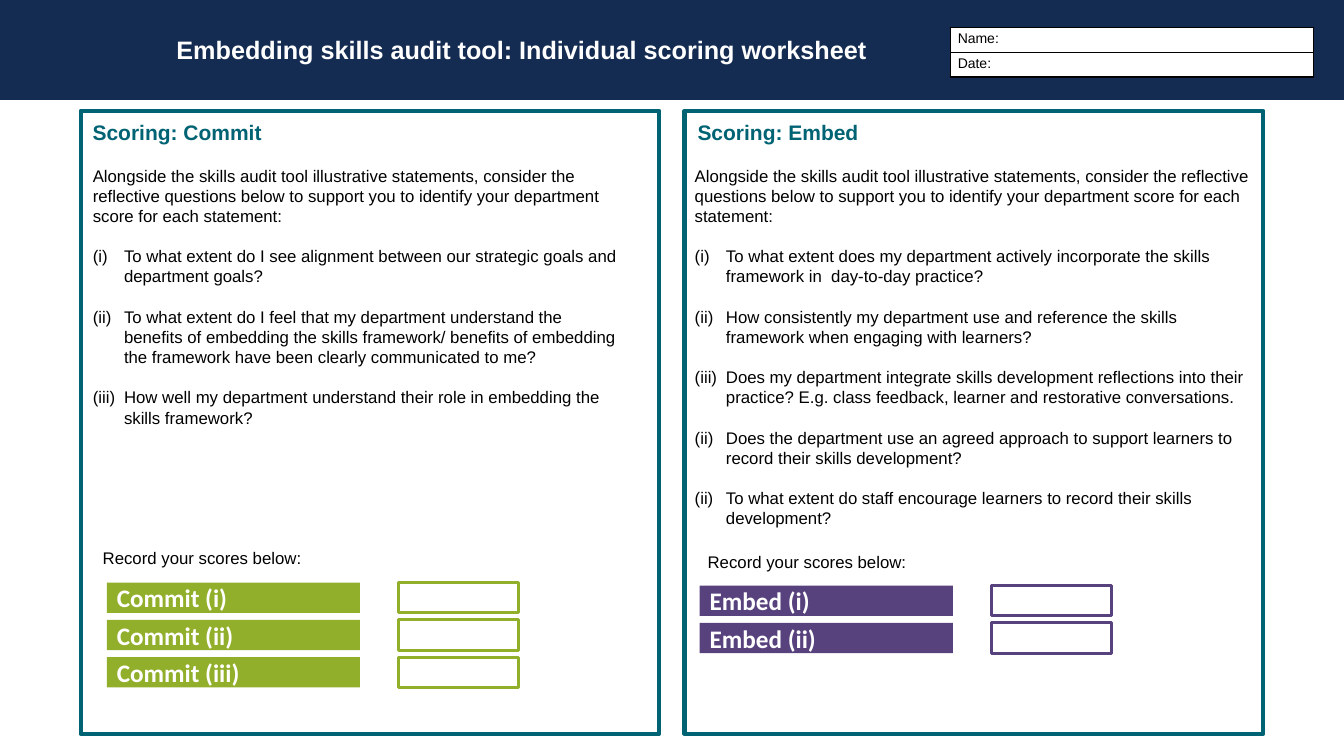
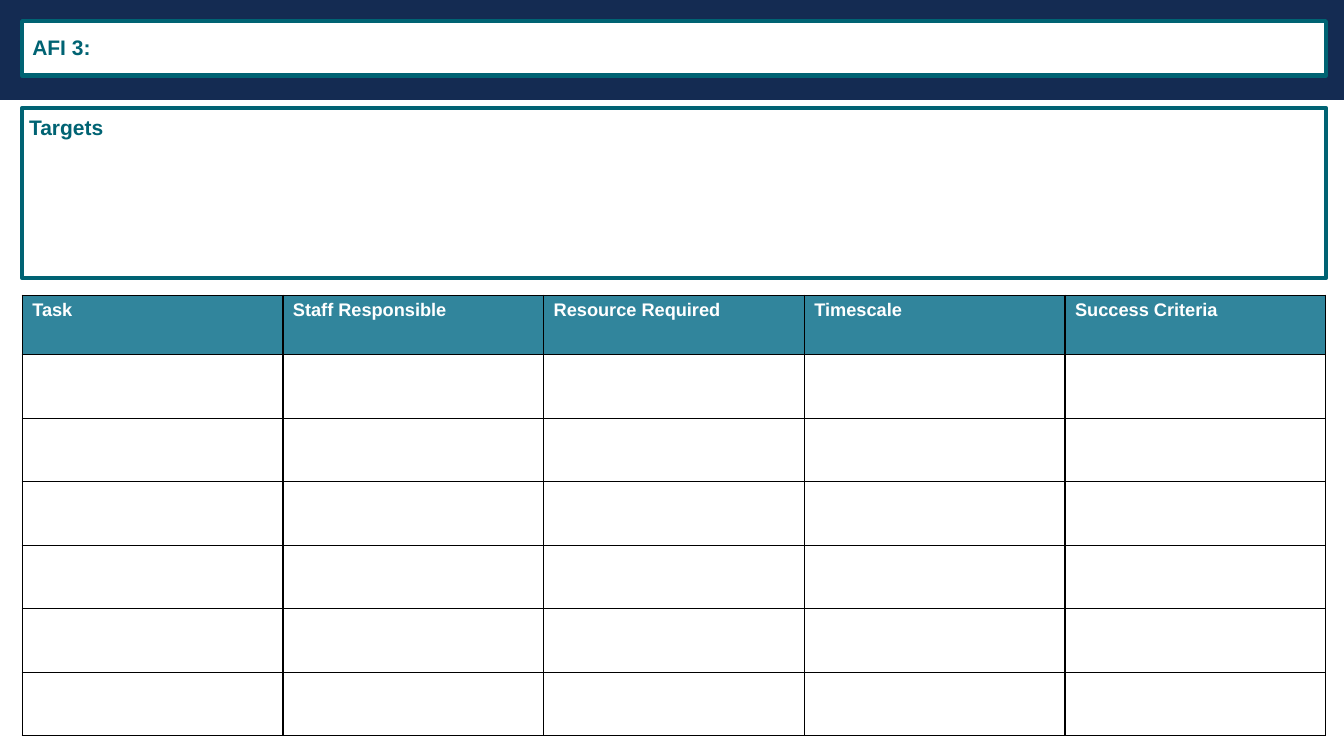
"""Build the scoring worksheet and the action plan of the skills audit."""
from lxml import etree
from pptx import Presentation
from pptx.dml.color import RGBColor
from pptx.enum.shapes import MSO_SHAPE as Preset
from pptx.enum.text import MSO_ANCHOR as Anchor, MSO_AUTO_SIZE as AutoSize, PP_ALIGN as Align
from pptx.oxml.ns import qn
from pptx.util import Emu, Pt

EMU_PER_PX = 9144
COLORS = {
    "navy": "142B52", "teal": "006373", "header": "31859C", "green": "92AF2B",
    "purple": "58427E", "white": "FFFFFF", "black": "000000",
}
SLIDE_SIZE = (1333, 750)
BAND = (0, 0, 1333, 99)

WORKSHEET_TITLE = "Embedding skills audit tool: Individual scoring worksheet"
INTRO = (
    "Alongside the skills audit tool illustrative statements, consider the reflective "
    "questions below to support you to identify your department score for each statement:"
)
RECORD = "Record your scores below:"
RESPONDENT = [["Name:"], ["Date:"]]
STAGES = [
    {
        "heading": "Scoring: Commit", "color": "green",
        "panel": (80, 110, 574, 618), "heading_at": (82, 114, 190, 35),
        "body_at": (82, 159, 549, 273), "record_at": (92, 538, 278, 30),
        "scores_at": (106, 578),
        "scores": ["Commit (i)", "Commit (ii)", "Commit (iii)"],
        "questions": [
            (1, "To what extent do I see alignment between our strategic goals and "
                "department goals?"),
            (1, "To what extent do I feel that my department understand the benefits of "
                "embedding the skills framework/ benefits of embedding the framework have "
                "been clearly communicated to me?"),
            (1, "How well my department understand their role in embedding the skills "
                "framework?"),
        ],
    },
    {
        "heading": "Scoring: Embed", "color": "purple",
        "panel": (679, 110, 574, 618), "heading_at": (682, 114, 190, 35),
        "body_at": (679, 159, 574, 374), "record_at": (692, 542, 278, 30),
        "scores_at": (694, 581),
        "scores": ["Embed (i)", "Embed (ii)"],
        "questions": [
            (1, "To what extent does my department actively incorporate the skills "
                "framework in  day-to-day practice?"),
            (1, "How consistently my department use and reference the skills framework "
                "when engaging with learners?"),
            (1, "Does my department integrate skills development reflections into their "
                "practice? E.g. class feedback, learner and restorative conversations."),
            (2, "Does the department use an agreed approach to support learners to record "
                "their skills development?"),
            (None, "(ii)\tTo what extent do staff encourage learners to record their skills "
                   "development?"),
        ],
    },
]
SCORE_LABEL = (251, 30)
SCORE_BOX = (119, 30)
SCORE_BOX_OFFSET = 289
SCORE_PITCH = 37
QUESTION_INDENT = 31

AFI = "AFI 3:"
TARGETS = "Targets"
PLAN_HEADINGS = ["Task", "Staff Responsible", "Resource Required", "Timescale", "Success Criteria"]
PLAN_BLANK_ROWS = 6


def px(length):
    return Emu(round(length * EMU_PER_PX))


def rgb(color):
    return RGBColor.from_string(COLORS[color])


def write(paragraph, text, size, color, bold=False, font="Arial"):
    paragraph.alignment = Align.LEFT
    run = paragraph.add_run()
    run.text = text
    run.font.name, run.font.size, run.font.bold = font, Pt(size), bold
    run.font.color.rgb = rgb(color)


def add_box(slide, at, fill=None, line=None, width=3):
    box = slide.shapes.add_shape(Preset.RECTANGLE, *map(px, at))
    box.shadow.inherit = False
    if fill:
        box.fill.solid()
        box.fill.fore_color.rgb = rgb(fill)
    else:
        box.fill.background()
    if line:
        box.line.color.rgb = rgb(line)
        box.line.width = Pt(width)
    else:
        box.line.fill.background()
    return box


def add_label(slide, at, text, size, color, bold=False):
    label = slide.shapes.add_textbox(*map(px, at))
    label.text_frame.word_wrap = True
    write(label.text_frame.paragraphs[0], text, size, color, bold)


def place(slide, placeholder, at):
    """Move a placeholder to its position and in front of what is drawn so far."""
    placeholder.left, placeholder.top, placeholder.width, placeholder.height = map(px, at)
    slide.shapes._spTree.append(placeholder._element)
    frame = placeholder.text_frame
    frame.word_wrap = True
    frame.auto_size = AutoSize.NONE
    frame.vertical_anchor = Anchor.TOP
    return frame


def add_banded_slide(prs, layout):
    slide = prs.slides.add_slide(prs.slide_layouts[layout])
    add_box(slide, BAND, fill="navy")
    return slide


def set_title(slide, at, text, size, color):
    frame = place(slide, slide.shapes.title, at)
    write(frame.paragraphs[0], text, size, color, bold=True)


def set_numbering(paragraph, start, indent):
    props = paragraph._p.get_or_add_pPr()
    props.set("marL", str(px(indent)))
    props.set("indent", str(-px(indent)))
    if start is None:
        etree.SubElement(props, qn("a:buNone"))
        return
    etree.SubElement(props, qn("a:buFont"), typeface="+mj-lt")
    number = etree.SubElement(props, qn("a:buAutoNum"), type="romanLcParenBoth")
    if start > 1:
        number.set("startAt", str(start))


def fill_questions(frame, questions):
    entries = [(None, INTRO, 0)] + [(start, text, QUESTION_INDENT) for start, text in questions]
    for order, (start, text, indent) in enumerate(entries):
        paragraph = frame.add_paragraph() if order else frame.paragraphs[0]
        paragraph.line_spacing = Pt(14.4)
        paragraph.space_before = Pt(14.4 if order else 0)
        set_numbering(paragraph, start, indent)
        write(paragraph, text, 12, "black")


def add_grid(slide, at, rows, heights, size, header=None, margins=None):
    """Add a bordered table; a header colour makes the first row bold white on it."""
    table = slide.shapes.add_table(len(rows), len(rows[0]), *map(px, at)).table
    table.first_row = table.horz_banding = False
    for r, (texts, height) in enumerate(zip(rows, heights)):
        table.rows[r].height = px(height)
        is_header = header is not None and r == 0
        for c, text in enumerate(texts):
            cell = table.cell(r, c)
            if margins:
                cell.margin_left = cell.margin_right = px(margins[0])
                cell.margin_top = cell.margin_bottom = px(margins[1])
            for side in ("lnL", "lnR", "lnT", "lnB"):
                border = etree.SubElement(
                    cell._tc.get_or_add_tcPr(), qn(f"a:{side}"), w=str(Pt(1)))
                solid = etree.SubElement(border, qn("a:solidFill"))
                etree.SubElement(solid, qn("a:srgbClr"), val=COLORS["black"])
            cell.fill.solid()
            cell.fill.fore_color.rgb = rgb(header if is_header else "white")
            if text:
                write(cell.text_frame.paragraphs[0], text, size,
                      "white" if is_header else "black", is_header)


def add_scores(slide, stage):
    left, top = stage["scores_at"]
    for order, name in enumerate(stage["scores"]):
        y = top + order * SCORE_PITCH
        label = add_box(slide, (left, y, *SCORE_LABEL), fill=stage["color"])
        label.text_frame.vertical_anchor = Anchor.MIDDLE
        write(label.text_frame.paragraphs[0], name, 18, "white", True, "Calibri")
        add_box(slide, (left + SCORE_BOX_OFFSET, y, *SCORE_BOX), "white", stage["color"], 2.25)


def build_worksheet(prs):
    slide = add_banded_slide(prs, 3)
    set_title(slide, (165, 29, 739, 40), WORKSHEET_TITLE, 18, "white")
    bodies = [holder for holder in slide.placeholders if holder.placeholder_format.idx in (1, 2)]
    for stage, body in zip(STAGES, bodies):
        add_box(slide, stage["panel"], line="teal")
        add_label(slide, stage["heading_at"], stage["heading"], 15, "teal", True)
        fill_questions(place(slide, body, stage["body_at"]), stage["questions"])
        add_label(slide, stage["record_at"], RECORD, 12, "black")
        add_scores(slide, stage)
    add_grid(slide, (943, 27, 360, 48), RESPONDENT, [24, 24], 10, margins=(7, 4))


def build_plan(prs):
    slide = add_banded_slide(prs, 5)
    add_box(slide, (22, 21, 1293, 54), "white", "teal")
    set_title(slide, (22, 29, 300, 35), AFI, 15, "teal")
    add_box(slide, (22, 107, 1293, 169), line="teal")
    add_label(slide, (19, 109, 300, 35), TARGETS, 15, "teal", True)
    rows = [PLAN_HEADINGS] + [[""] * len(PLAN_HEADINGS)] * PLAN_BLANK_ROWS
    heights = [59] + [63] * PLAN_BLANK_ROWS
    add_grid(slide, (22, 293, 1293, sum(heights)), rows, heights, 13, header="header")


def main():
    prs = Presentation()
    prs.slide_width, prs.slide_height = map(px, SLIDE_SIZE)
    build_worksheet(prs)
    build_plan(prs)
    prs.save("out.pptx")


if __name__ == "__main__":
    main()
